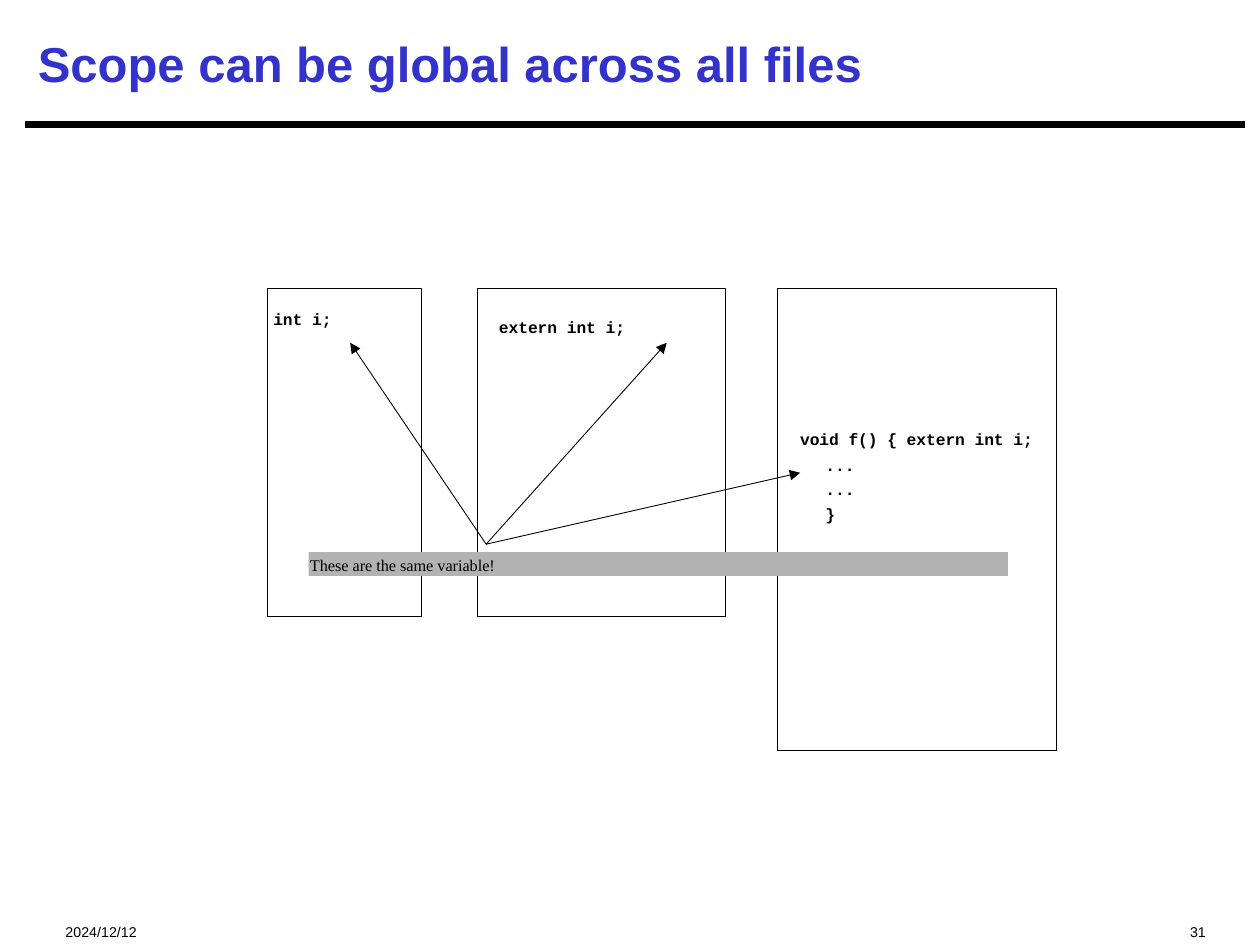
from dataclasses import dataclass

from pptx import Presentation
from pptx.dml.color import RGBColor
from pptx.enum.shapes import MSO_CONNECTOR, MSO_SHAPE
from pptx.enum.text import MSO_ANCHOR, PP_ALIGN
from pptx.oxml.ns import qn
from pptx.util import Cm, Pt
from lxml.etree import SubElement

COLORS = {"ink": "000000", "title": "3333CC", "band": "B2B2B2"}
TOP = 5.82
START = (9.8, 10.97)
TIPS = [(7.06, 6.91), (13.44, 6.91), (16.13, 9.53)]


@dataclass
class Panel:
    left: float
    width: float
    height: float


@dataclass
class Line:
    text: str
    space: float = 0
    lead: float = 0
    margin: float = 0
    indent: float = 0


@dataclass
class Label:
    box: tuple[float, float, float, float]
    lines: list[Line]
    font: str = "Courier New"
    size: int = 16
    bold: bool = True
    inset: tuple[float, float] = (0, 0.03)
    align: PP_ALIGN = PP_ALIGN.LEFT


PANELS = [Panel(5.38, 3.12, 6.6), Panel(9.63, 5, 6.6), Panel(15.67, 5.63, 9.31)]

CODE = [
    Label((5.51, TOP, 2.24, 0.71), [Line("int i;", 1)]),
    Label((10.06, 5.99, 4.62, 0.71), [Line("extern int i;", 1)]),
    Label((16.13, 8.48, 4.93, 2.62), [
        Line("void f() { extern int i;", 1.9, 13.9, 0.51, -0.51),
        Line("...", 0.4, 14.2, 0.51),
        Line("...", 0, 13.9, 0.51),
        Line("}", 0, 14.2, 0.51),
    ], inset=(0, 0.08)),
]

BAND = Label((6.22, 11.13, 14.1, 0.48),
             [Line("These are the same variable!", 0, 13.2, 0.03)],
             "Times New Roman", bold=False, inset=(0, 0))

FOOT = [
    Label((1.07, 18.16, 6.35, 0.69), [Line("2024/12/12")],
          "Arial", 14, False, (0.25, 0.13)),
    Label((16.94, 18.16, 7.62, 0.69), [Line("31")],
          "Arial", 14, False, (0.25, 0.13), PP_ALIGN.RIGHT),
]


def tint(name: str) -> RGBColor:
    return RGBColor.from_string(COLORS[name])


def write(shape, label: Label) -> None:
    """Fill a shape with lowered text, as subscript."""
    frame = shape.text_frame
    frame.word_wrap = True
    frame.vertical_anchor = MSO_ANCHOR.TOP
    side, top = label.inset
    frame.margin_left = frame.margin_right = Cm(side)
    frame.margin_top, frame.margin_bottom = Cm(top), Cm(0)
    for i, line in enumerate(label.lines):
        para = frame.paragraphs[0] if i == 0 else frame.add_paragraph()
        para.alignment = label.align
        para.space_before = Pt(line.space)
        if line.lead:
            para.line_spacing = Pt(line.lead)
        font = para.font
        font.name, font.size, font.bold = label.font, Pt(label.size), label.bold
        font.color.rgb = tint("ink")
        props = para._p.get_or_add_pPr()
        props.set("marL", str(Cm(line.margin)))
        props.set("indent", str(Cm(line.indent)))
        run = para.add_run()
        run.text = line.text
        run._r.get_or_add_rPr().set("baseline", "-25000")


def add_label(slide, label: Label) -> None:
    write(slide.shapes.add_textbox(*map(Cm, label.box)), label)


def add_rect(slide, box: tuple[float, float, float, float]):
    rect = slide.shapes.add_shape(MSO_SHAPE.RECTANGLE, *map(Cm, box))
    rect.shadow.inherit = False
    return rect


def add_panel(slide, panel: Panel) -> None:
    rect = add_rect(slide, (panel.left, TOP, panel.width, panel.height))
    rect.fill.background()
    rect.line.color.rgb = tint("ink")
    rect.line.width = Pt(0.37)


def add_band(slide) -> None:
    rect = add_rect(slide, BAND.box)
    rect.fill.solid()
    rect.fill.fore_color.rgb = tint("band")
    rect.line.fill.background()
    write(rect, BAND)


def add_line(slide, start: tuple[float, float], end: tuple[float, float],
             width: float, arrow: bool = False) -> None:
    line = slide.shapes.add_connector(
        MSO_CONNECTOR.STRAIGHT, *map(Cm, start + end))
    line.line.color.rgb = tint("ink")
    line.line.width = Pt(width)
    props = line._element.spPr
    if arrow:
        SubElement(props.find(qn("a:ln")), qn("a:tailEnd"), type="triangle")
    SubElement(props, qn("a:effectLst"))


def add_title(slide, text: str) -> None:
    title = slide.shapes.title
    title.left, title.top, title.width, title.height = map(
        Cm, (0.51, 0.2, 24.56, 2.13))
    frame = title.text_frame
    frame.text = text
    frame.vertical_anchor = MSO_ANCHOR.MIDDLE
    para = frame.paragraphs[0]
    para.alignment = PP_ALIGN.LEFT
    font = para.font
    font.name, font.size, font.bold = "Arial", Pt(28), True
    font.color.rgb = tint("title")


def main() -> None:
    deck = Presentation()
    deck.slide_width, deck.slide_height = Cm(25.4), Cm(19.05)
    slide = deck.slides.add_slide(deck.slide_layouts[5])
    add_line(slide, (0.51, 2.51), (25.1, 2.51), 3.75)
    add_title(slide, "Scope can be global across all files")
    for label in FOOT:
        add_label(slide, label)
    for panel, label in zip(PANELS, CODE):
        add_panel(slide, panel)
        add_label(slide, label)
    add_band(slide)
    for tip in TIPS:
        add_line(slide, START, tip, 0.5, arrow=True)
    deck.save("out.pptx")


if __name__ == "__main__":
    main()
